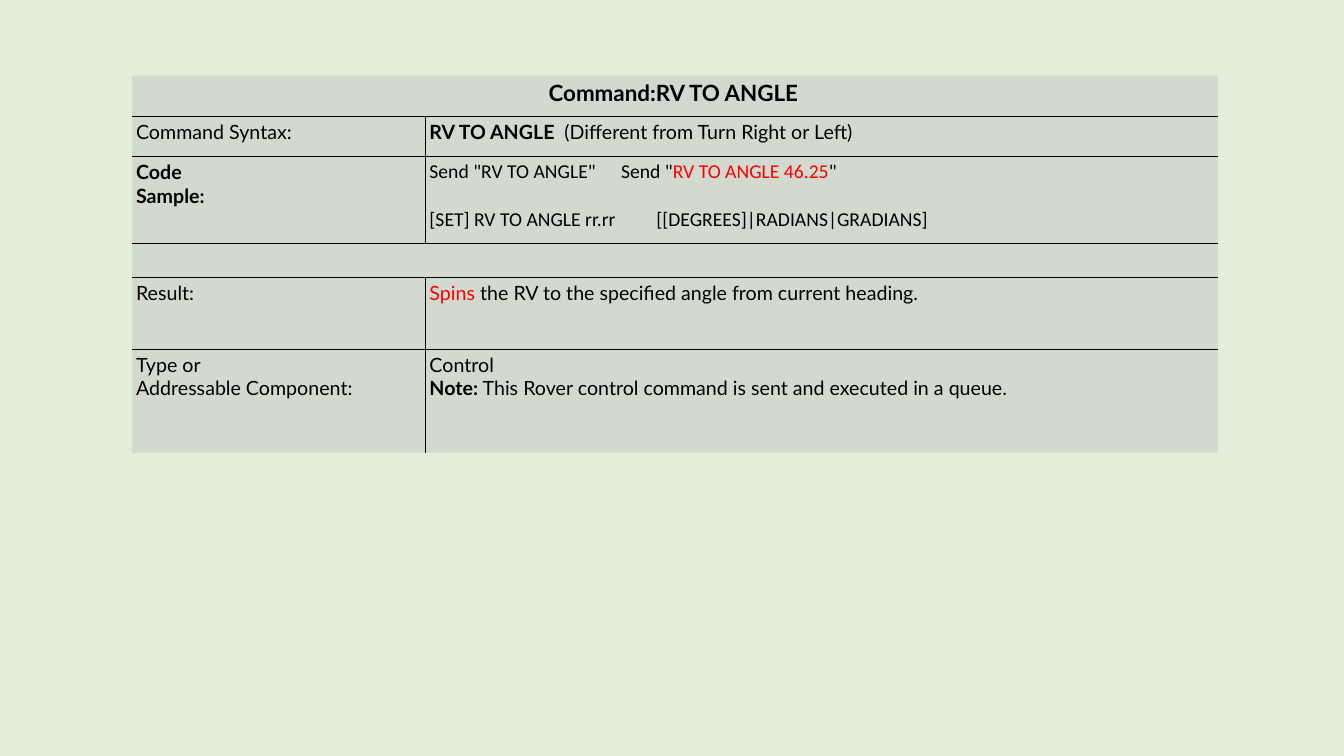
from lxml import etree
from pptx import Presentation
from pptx.dml.color import RGBColor
from pptx.enum import text
from pptx.oxml.ns import qn
from pptx.util import Inches, Pt

BLACK = RGBColor(0x00, 0x00, 0x00)
RED = RGBColor(0xFF, 0x00, 0x00)
SILVER = RGBColor(0xC0, 0xC0, 0xC0)
PALE_GREEN = RGBColor(0xE1, 0xEE, 0xD9)

NO_STYLE = "{2D5ABB26-0587-4C30-8999-92F81FD0307C}"
LEFT, TOP = 1.31, 0.75
COL_WIDTHS = [2.91, 7.86]
ROW_HEIGHTS = [0.4, 0.4, 0.86, 0.34, 0.71, 1.03]
CODE_ROW = 2
CODE_TABS = [1.9, 2.25]
SILVER_ALPHA = 44000
BORDER_PT = 0.38

# Row > cell > paragraph > (text, bold, colour); a one-cell row spans the table.
ROWS = [
    [[[("Command:RV TO ANGLE", True, BLACK)]]],
    [[[("Command Syntax:", False, BLACK)]],
     [[("RV TO ANGLE ", True, BLACK),
       (" (Different from Turn Right or Left)", False, BLACK)]]],
    [[[("Code \nSample:", True, BLACK)]],
     [[('Send "RV TO ANGLE"\tSend "', False, BLACK),
       ("RV TO ANGLE 46.25", False, RED),
       ('"', False, BLACK)],
      [("[SET] RV TO ANGLE rr.rr\t[[DEGREES]|RADIANS|GRADIANS]", False, BLACK)]]],
    [[[]]],
    [[[("Result:", False, BLACK)]],
     [[("Spins", False, RED),
       (" the RV to the specified angle from current heading.", False, BLACK)]]],
    [[[("Type or \nAddressable Component:", False, BLACK)]],
     [[("Control", False, BLACK)],
      [("Note:", True, BLACK),
       (" This Rover control command is sent and executed in a queue.",
        False, BLACK)]]],
]


def add_border(cell, side):
    ln = etree.SubElement(cell._tc.get_or_add_tcPr(), qn(f"a:ln{side}"),
                          w=str(int(Pt(BORDER_PT))))
    fill = etree.SubElement(ln, qn("a:solidFill"))
    etree.SubElement(fill, qn("a:srgbClr"), val=str(BLACK))


def fill_cell(cell):
    cell.fill.solid()
    cell.fill.fore_color.rgb = SILVER
    color = cell._tc.tcPr.find(f"{qn('a:solidFill')}/{qn('a:srgbClr')}")
    etree.SubElement(color, qn("a:alpha"), val=str(SILVER_ALPHA))


def add_tab(p, inches):
    tabs = etree.SubElement(p._p.get_or_add_pPr(), qn("a:tabLst"))
    etree.SubElement(tabs, qn("a:tab"), pos=str(int(Inches(inches))), algn="l")


def write_paragraph(p, runs, font, size):
    for words, bold, color in runs:
        for i, line in enumerate(words.split("\n")):
            if i:
                p.add_line_break()
            r = p.add_run()
            r.text = line
            r.font.name, r.font.size = font, Pt(size)
            r.font.bold, r.font.color.rgb = bold, color
    if not runs:
        etree.SubElement(p._p, qn("a:endParaRPr"), sz=str(size * 100))


def write_cell(cell, paragraphs, row, col):
    is_code = row == CODE_ROW and col == 1
    tf = cell.text_frame
    for i, runs in enumerate(paragraphs):
        p = tf.add_paragraph() if i else tf.paragraphs[0]
        if row == 0:
            p.alignment = text.PP_ALIGN.CENTER
        if is_code:
            p.space_before = Pt(17 * i)
            add_tab(p, CODE_TABS[i])
        write_paragraph(p, runs, "Calibri" if is_code else "Lato",
                        16 if row == 0 else 14)


prs = Presentation()
prs.slide_width, prs.slide_height = Inches(13.33), Inches(7.5)
s = prs.slides.add_slide(prs.slide_layouts[6])
s.background.fill.solid()
s.background.fill.fore_color.rgb = PALE_GREEN

table = s.shapes.add_table(
    len(ROWS), len(COL_WIDTHS), Inches(LEFT), Inches(TOP),
    Inches(sum(COL_WIDTHS)), Inches(sum(ROW_HEIGHTS))).table
table.first_row = table.horz_banding = False
table._tbl.tblPr.find(qn("a:tableStyleId")).text = NO_STYLE
for column, width in zip(table.columns, COL_WIDTHS):
    column.width = Inches(width)

for row, (contents, height) in enumerate(zip(ROWS, ROW_HEIGHTS)):
    table.rows[row].height = Inches(height)
    split = len(contents) > 1
    if not split:
        table.cell(row, 0).merge(table.cell(row, 1))
    for col in range(len(COL_WIDTHS)):
        cell = table.cell(row, col)
        cell.margin_left = cell.margin_top = cell.margin_bottom = Inches(0.04)
        cell.margin_right = Inches(0.07)
        if split:
            add_border(cell, "L" if col else "R")
        if row > 0:
            add_border(cell, "T")
        if row < len(ROWS) - 1:
            add_border(cell, "B")
        fill_cell(cell)
        if col < len(contents):
            write_cell(cell, contents[col], row, col)

prs.save("out.pptx")
